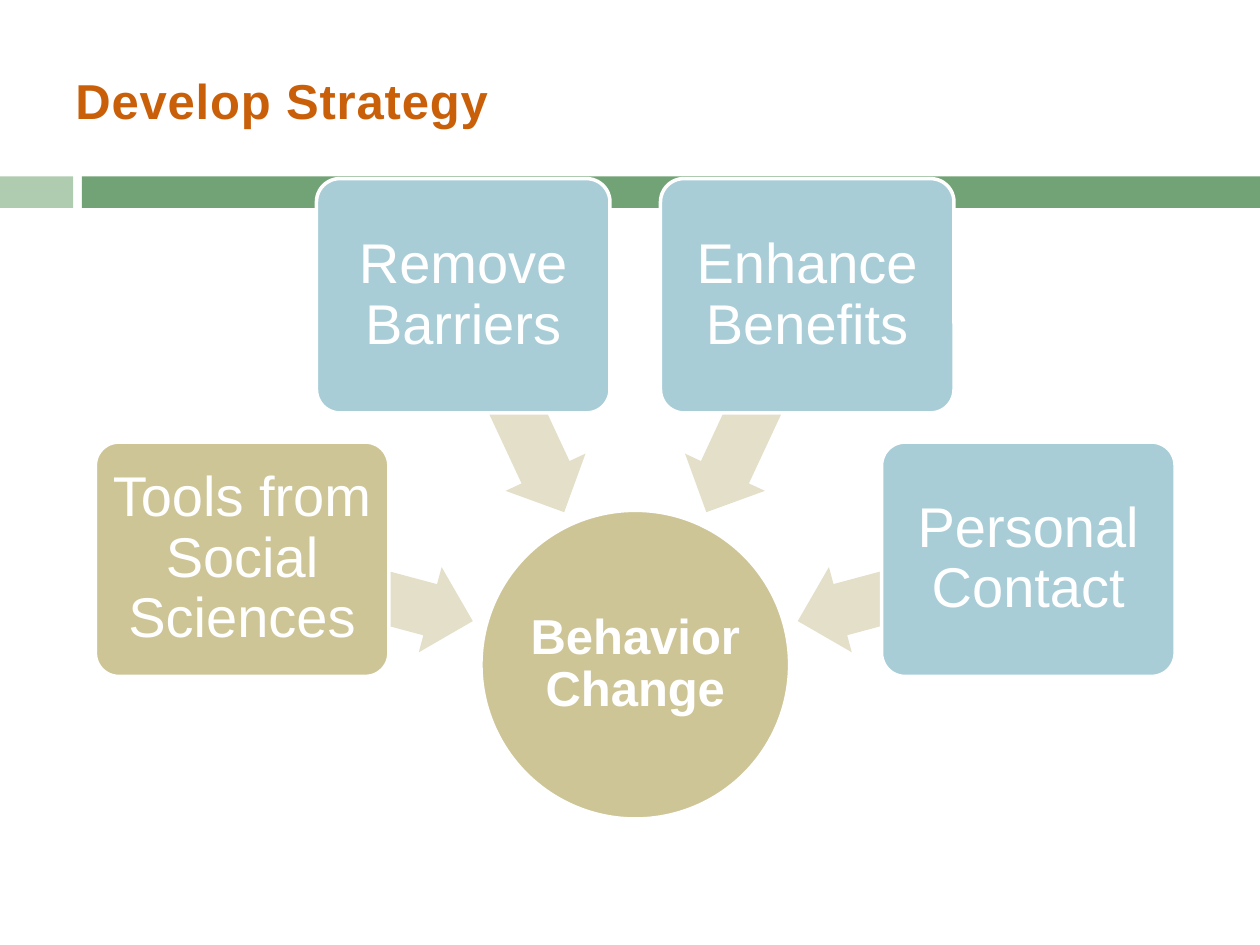
from dataclasses import dataclass
from math import cos, radians, sin

from pptx import Presentation
from pptx.dml.color import RGBColor
from pptx.enum.shapes import MSO_SHAPE as Shape
from pptx.enum.text import MSO_ANCHOR as Anchor, PP_ALIGN as Align
from pptx.util import Inches, Pt

COLUMNS, ROWS = 100, 75  # square grid cells


@dataclass(frozen=True)
class Theme:
    font: str = "Arial"
    title: str = "C96009"
    band: str = "72A376"
    band_light: str = "B0CCB0"
    sand: str = "CEC597"
    sand_light: str = "E3DFC9"
    blue: str = "A8CDD7"
    white: str = "FFFFFF"
    title_size: int = 28
    hub_size: int = 28
    box_size: int = 32
    outline: int = 2


class SlideBuilder:
    def __init__(self, presentation, theme):
        self.theme = theme
        self.slide = presentation.slides.add_slide(presentation.slide_layouts[6])
        self.column = presentation.slide_width / COLUMNS
        self.row = presentation.slide_height / ROWS

    def place(self, left, top, width, height):
        return (round(left * self.column), round(top * self.row),
                round(width * self.column), round(height * self.row))

    def label(self, shape, text, size, color, bold=False, align=Align.CENTER,
              inset=0.07, line_spacing=0.9):
        frame = shape.text_frame
        frame.text = text
        frame.word_wrap = True
        frame.vertical_anchor = Anchor.MIDDLE
        frame.margin_left = frame.margin_right = Inches(inset)
        frame.margin_top = frame.margin_bottom = Inches(inset)
        paragraph = frame.paragraphs[0]
        paragraph.alignment = align
        paragraph.line_spacing = line_spacing
        run = paragraph.runs[0]
        run.font.name = self.theme.font
        run.font.size = Pt(size)
        run.font.bold = bold
        run.font.color.rgb = RGBColor.from_string(color)
        return run

    def title(self, text, left, top, width, height):
        box = self.slide.shapes.add_textbox(*self.place(left, top, width, height))
        run = self.label(box, text, self.theme.title_size, self.theme.title, bold=True,
                         align=Align.LEFT, inset=0.1, line_spacing=1)
        run._r.get_or_add_rPr().set("spc", "50")  # letter spacing, 1/100 pt

    def shape(self, kind, left, top, width, height, fill, outlined=False, adjustments=()):
        shape = self.slide.shapes.add_shape(kind, *self.place(left, top, width, height))
        shape.shadow.inherit = False
        shape.fill.solid()
        shape.fill.fore_color.rgb = RGBColor.from_string(fill)
        if outlined:
            shape.line.color.rgb = RGBColor.from_string(self.theme.white)
            shape.line.width = Pt(self.theme.outline)
        else:
            shape.line.fill.background()
        for index, value in enumerate(adjustments):
            shape.adjustments[index] = value
        return shape

    def centered(self, kind, center, size, fill, **options):
        (x, y), (width, height) = center, size
        return self.shape(kind, x - width / 2, y - height / 2, width, height, fill, **options)

    def hub(self, text, center, diameter):
        circle = self.centered(Shape.OVAL, center, (diameter, diameter),
                               self.theme.sand, outlined=True)
        self.label(circle, text, self.theme.hub_size, self.theme.white, bold=True, inset=0.02)

    def arrow(self, center, angle):
        arrow = self.centered(Shape.LEFT_ARROW, center, (18.9, 7), self.theme.sand_light,
                              adjustments=(0.6, 0.5))
        arrow.rotation = 180 + angle

    def box(self, text, center, fill):
        box = self.centered(Shape.ROUNDED_RECTANGLE, center, (23.3, 18.6), fill,
                            outlined=True, adjustments=(0.1,))
        self.label(box, text, self.theme.box_size, self.theme.white)


def around(center, radius, angle):
    """Point on a circle; the angle runs clockwise from the left."""
    x, y = center
    return x - radius * cos(radians(angle)), y - radius * sin(radians(angle))


def main():
    presentation = Presentation()
    presentation.slide_width, presentation.slide_height = Inches(10), Inches(7.5)
    theme = Theme()
    builder = SlideBuilder(presentation, theme)

    # Band and title
    builder.shape(Shape.RECTANGLE, 0, 14, 5.8, 2.5, theme.band_light)
    builder.shape(Shape.RECTANGLE, 6.5, 14, 93.5, 2.5, theme.band)
    builder.title("Develop Strategy", 5, 4.2, 90, 7.5)

    # Hub with boxes fanned around it, each pointing inward
    hub_center = (50.42, 52.75)
    builder.hub("Behavior Change", hub_center, 24.5)
    strategies = [
        ("Tools from Social Sciences", theme.sand),
        ("Remove Barriers", theme.blue),
        ("Enhance Benefits", theme.blue),
        ("Personal Contact", theme.blue),
    ]
    for index, (text, fill) in enumerate(strategies):
        angle = 15 + 50 * index
        builder.arrow(around(hub_center, 22.8, angle), angle)
        builder.box(text, around(hub_center, 32.3, angle), fill)

    presentation.save("out.pptx")


if __name__ == "__main__":
    main()
